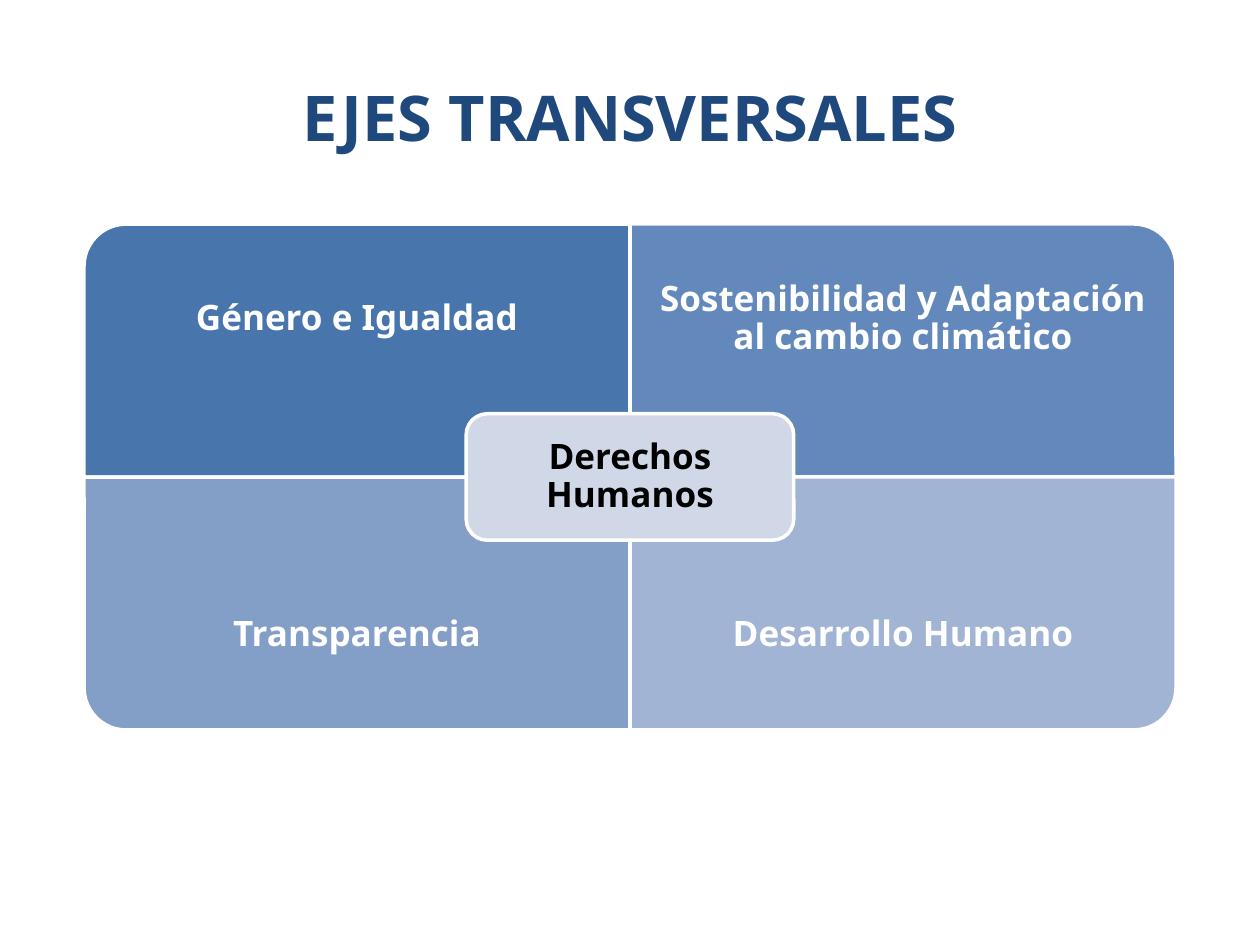
from pptx import Presentation, util as u
from pptx.dml.color import RGBColor
from pptx.enum import shapes, text

PX = u.Inches(1) / 126
FONT = "Noto Sans"
COLORS = {
    "title": "1F497D", "white": "FFFFFF", "black": "000000",
    "gender": "4875AC", "climate": "6389BC",
    "transparency": "839EC7", "development": "A2B4D4", "center": "D0D8E8",
}
# Label, colour, column, row, rotation that puts the round corner outside
QUADRANTS = [
    ("Género e Igualdad", "gender", 0, 0, 270),
    ("Sostenibilidad y Adaptación al cambio climático", "climate", 1, 0, 0),
    ("Transparencia", "transparency", 0, 1, 180),
    ("Desarrollo Humano", "development", 1, 1, 90),
]


def emu(*lengths):
    return [u.Emu(round(length * PX)) for length in lengths]


def color(name):
    return RGBColor.from_string(COLORS[name])


def add_label(slide, box, wording, size, color_name, inset, spacing=1.0):
    label = slide.shapes.add_textbox(*emu(*box))
    frame = label.text_frame
    frame.word_wrap = True
    frame.vertical_anchor = text.MSO_ANCHOR.MIDDLE
    frame.margin_left = frame.margin_right = emu(inset)[0]
    frame.margin_top = frame.margin_bottom = emu(inset)[0]
    frame.text = wording
    paragraph = frame.paragraphs[0]
    paragraph.alignment = text.PP_ALIGN.CENTER
    paragraph.line_spacing = spacing
    font = paragraph.runs[0].font
    font.name, font.size, font.bold = FONT, u.Pt(size), True
    font.color.rgb = color(color_name)


def add_panel(slide, kind, box, fill, rotation=0):
    left, top, width, height = box
    if rotation in (90, 270):  # a quarter turn swaps the sides about the centre
        left, top = left + (width - height) / 2, top + (height - width) / 2
        width, height = height, width
    panel = slide.shapes.add_shape(kind, *emu(left, top, width, height))
    panel.rotation = rotation
    panel.shadow.inherit = False
    panel.fill.solid()
    panel.fill.fore_color.rgb = color(fill)
    panel.line.color.rgb = color("white")
    panel.line.width = u.Pt(2)


def add_matrix(slide, box):
    left, top, width, height = box
    cell_width, cell_height = width / 2, height / 2
    label_height = cell_height * 3 / 4

    # Four quadrants, labels kept to the outer three quarters
    for wording, fill, column, row, rotation in QUADRANTS:
        x, y = left + column * cell_width, top + row * cell_height
        add_panel(slide, shapes.MSO_SHAPE.ROUND_1_RECTANGLE,
                  (x, y, cell_width, cell_height), fill, rotation)
        label_top = y + row * (cell_height - label_height)
        add_label(slide, (x, label_top, cell_width, label_height),
                  wording, 20, "white", 20, 0.9)

    # Centre plate
    plate_width, plate_height, edge = cell_width * 3 / 5, cell_height / 2, 6
    x = left + (width - plate_width) / 2
    y = top + (height - plate_height) / 2
    add_panel(slide, shapes.MSO_SHAPE.ROUNDED_RECTANGLE,
              (x, y, plate_width, plate_height), "center")
    add_label(slide, (x + edge, y + edge, plate_width - 2 * edge, plate_height - 2 * edge),
              "Derechos Humanos", 20, "black", 10, 0.9)


def main():
    presentation = Presentation()
    presentation.slide_width, presentation.slide_height = emu(1260, 945)
    slide = presentation.slides.add_slide(presentation.slide_layouts[6])
    add_label(slide, (63, 38, 1134, 157), "EJES TRANSVERSALES", 36, "title", 6)
    add_matrix(slide, (84, 224, 1092, 506))
    presentation.save("out.pptx")


if __name__ == "__main__":
    main()
